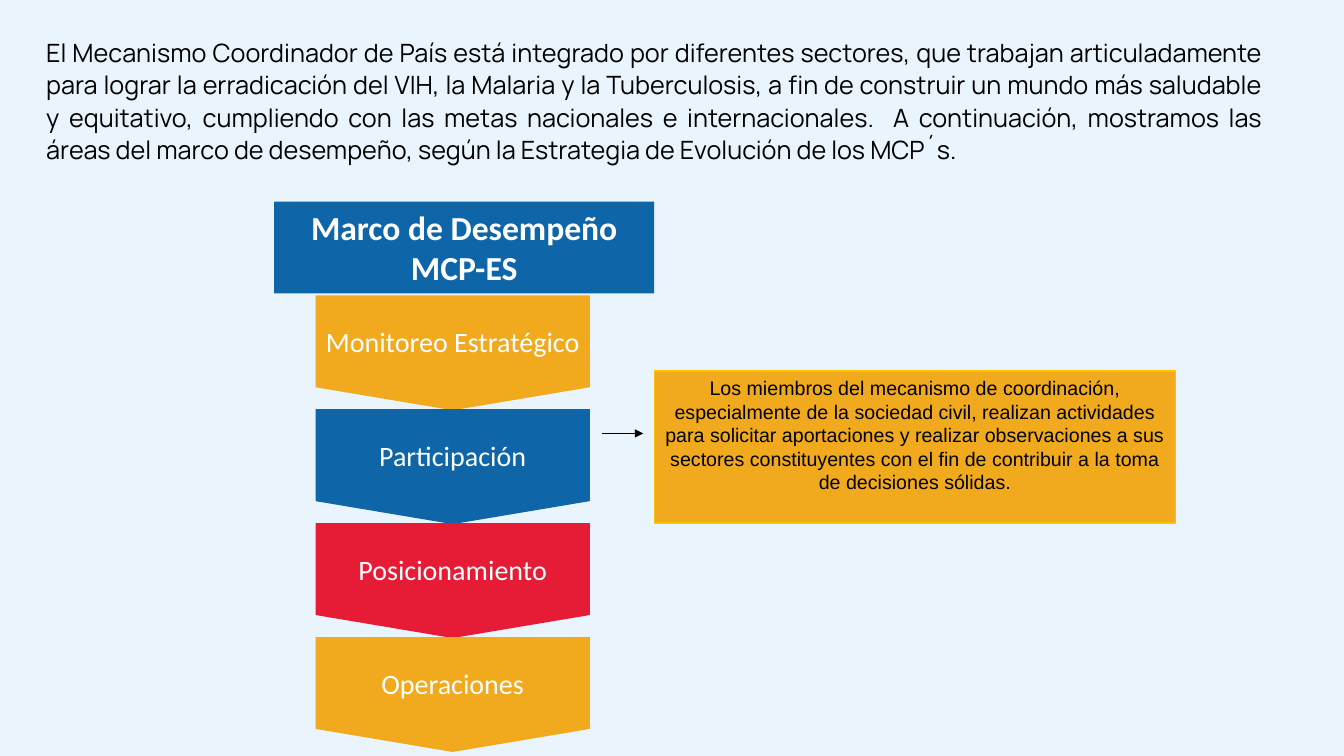
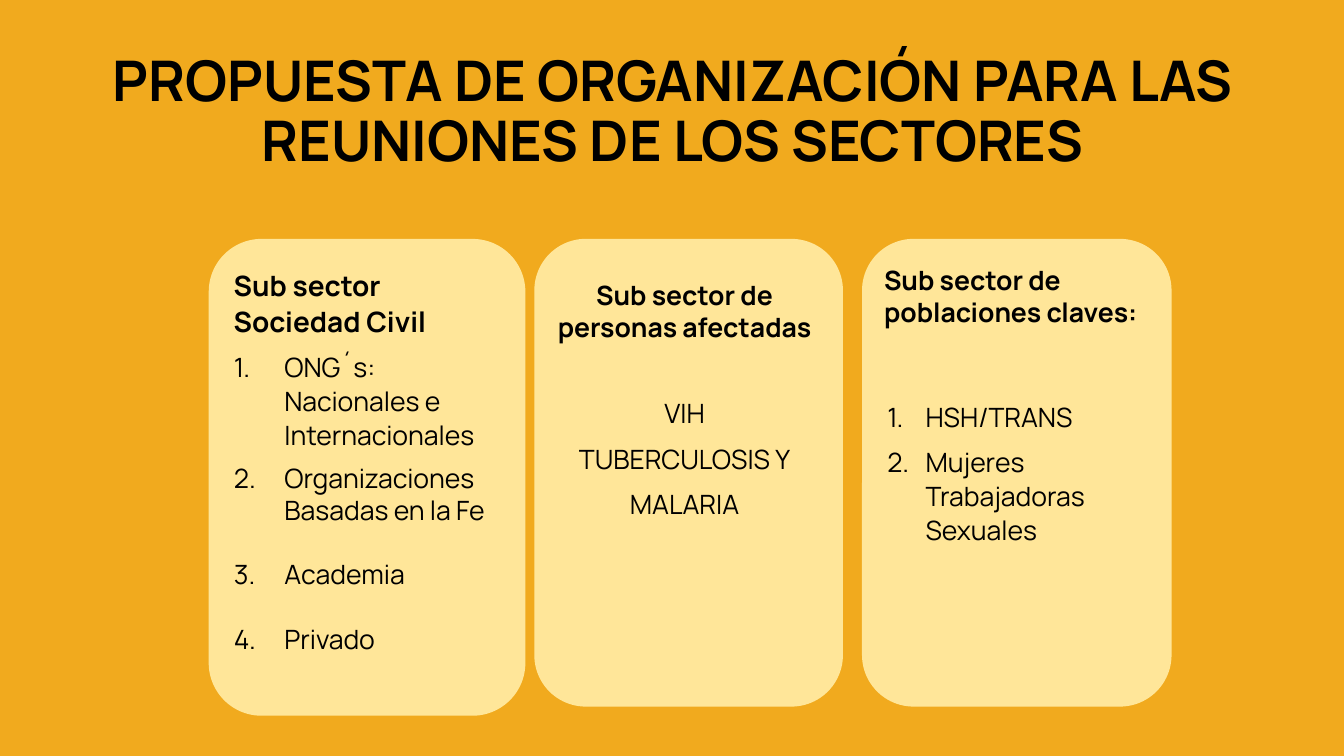
from dataclasses import dataclass

from lxml.etree import SubElement
from pptx import Presentation
from pptx.dml.color import RGBColor
from pptx.enum.shapes import MSO_CONNECTOR as Connector, MSO_SHAPE as Shape
from pptx.enum.text import MSO_ANCHOR as Anchor, MSO_AUTO_SIZE as AutoSize, PP_ALIGN as Align
from pptx.oxml.ns import qn
from pptx.util import Inches, Pt

BLACK = RGBColor(0x00, 0x00, 0x00)
WHITE = RGBColor(0xFF, 0xFF, 0xFF)
SKY = RGBColor(0xE9, 0xF4, 0xFD)
AMBER = RGBColor(0xF1, 0xAA, 0x1E)
GOLD = RGBColor(0xFF, 0xC0, 0x00)
CREAM = RGBColor(0xFF, 0xE6, 0x99)
BLUE = RGBColor(0x0E, 0x65, 0xA8)
RED = RGBColor(0xE6, 0x1C, 0x36)
BRAND_FONT = "Manrope"
CHART_FONT = "Calibri"
TITLE_ONLY, TWO_CONTENT = 5, 3

INTRO = (
    "El Mecanismo Coordinador de País está integrado por diferentes sectores, que trabajan "
    "articuladamente para lograr la erradicación del VIH, la Malaria y la Tuberculosis, a fin de "
    "construir un mundo más saludable y equitativo, cumpliendo con las metas nacionales e "
    "internacionales.  A continuación, mostramos las áreas del marco de desempeño, según la "
    "Estrategia de Evolución de los MCP´s."
)
PARTICIPATION = (
    "Los miembros del mecanismo de coordinación, especialmente de la sociedad civil, realizan "
    "actividades para solicitar aportaciones y realizar observaciones a sus sectores "
    "constituyentes con el fin de contribuir a la toma de decisiones sólidas."
)
AREAS = [
    ("Monitoreo Estratégico", AMBER),
    ("Participación", BLUE),
    ("Posicionamiento", RED),
    ("Operaciones", AMBER),
]


@dataclass
class Box:
    """A rectangle divided into 100 columns and 100 rows."""

    left: int
    top: int
    width: int
    height: int

    def span(self, column, row, columns, rows):
        """Return the box that spans the given columns and rows."""
        return Box(
            int(self.left + self.width * column / 100),
            int(self.top + self.height * row / 100),
            int(self.width * columns / 100),
            int(self.height * rows / 100),
        )

    @property
    def bounds(self):
        """Return left, top, width and height."""
        return self.left, self.top, self.width, self.height


@dataclass
class Style:
    """Typography of a paragraph."""

    size: float
    font: str = BRAND_FONT
    color: RGBColor = BLACK
    bold: bool = False
    align: Align = Align.LEFT
    spacing: float = 1.0
    after: float = 0


def write(paragraph, text, style):
    """Write one styled run into a paragraph."""
    paragraph.alignment = style.align
    paragraph.line_spacing = style.spacing
    paragraph.space_before = Pt(0)
    paragraph.space_after = Pt(style.after)
    run = paragraph.add_run()
    run.text = text
    run.font.size = Pt(style.size)
    run.font.name = style.font
    run.font.bold = style.bold
    run.font.color.rgb = style.color


def number(paragraph, indent):
    """Number a paragraph with a hanging indent."""
    properties = paragraph._p.get_or_add_pPr()
    properties.set("marL", str(Inches(indent)))
    properties.set("indent", str(-Inches(indent)))
    SubElement(properties, qn("a:buFontTx"))
    SubElement(properties, qn("a:buAutoNum"), type="arabicPeriod")


def prepare(frame, anchor=Anchor.TOP):
    """Wrap a text frame at a fixed size and return it."""
    frame.word_wrap = True
    frame.auto_size = AutoSize.NONE
    frame.vertical_anchor = anchor
    return frame


def add_text(slide, box, text, style):
    """Add a text box with one paragraph."""
    frame = prepare(slide.shapes.add_textbox(*box.bounds).text_frame)
    write(frame.paragraphs[0], text, style)


def add_panel(slide, box, kind, fill, line=None):
    """Add a flat filled shape and return it."""
    panel = slide.shapes.add_shape(kind, *box.bounds)
    panel.shadow.inherit = False
    panel.fill.solid()
    panel.fill.fore_color.rgb = fill
    if line is None:
        panel.line.fill.background()
    else:
        panel.line.color.rgb = line
        panel.line.width = Pt(1)
    return panel


def place(holder, box):
    """Move a placeholder into a box."""
    holder.left, holder.top, holder.width, holder.height = box.bounds


def add_slide(deck, layout, background):
    """Add a slide with a plain background and return it with its box."""
    slide = deck.slides.add_slide(deck.slide_layouts[layout])
    slide.background.fill.solid()
    slide.background.fill.fore_color.rgb = background
    return slide, Box(0, 0, deck.slide_width, deck.slide_height)


def set_title(slide, box, text, style, anchor):
    """Fill and place the title placeholder."""
    title = slide.shapes.title
    place(title, box)
    write(prepare(title.text_frame, anchor).paragraphs[0], text, style)
    return title


def add_areas(slide, box):
    """Stack the performance areas as downward steps."""
    style = Style(20, CHART_FONT, WHITE, align=Align.CENTER)
    step_rows = 25.17
    pitch = (100 - step_rows) / (len(AREAS) - 1)
    for index, (area, color) in enumerate(AREAS):
        step_box = box.span(0, index * pitch, 100, step_rows)
        step = add_panel(slide, step_box, Shape.FLOWCHART_OFFPAGE_CONNECTOR, color)
        write(prepare(step.text_frame, Anchor.MIDDLE).paragraphs[0], area, style)


def add_arrow(slide, box):
    """Draw a thin arrow along the top of a box."""
    arrow = slide.shapes.add_connector(
        Connector.STRAIGHT, box.left, box.top, box.left + box.width, box.top
    )
    arrow.line.color.rgb = BLACK
    arrow.line.width = Pt(0.5)
    SubElement(arrow.line._get_or_add_ln(), qn("a:tailEnd"), type="triangle")
    SubElement(arrow.element.spPr, qn("a:effectLst"))


def add_callout(slide, box):
    """Explain the participation area."""
    callout = add_panel(slide, box, Shape.RECTANGLE, AMBER, GOLD)
    style = Style(14, "Arial", align=Align.CENTER)
    write(prepare(callout.text_frame).paragraphs[0], PARTICIPATION, style)


def build_framework(deck):
    """Build the performance framework slide."""
    slide, page = add_slide(deck, TITLE_ONLY, SKY)
    heading = Style(24, CHART_FONT, WHITE, True, Align.CENTER)
    title = set_title(
        slide, page.span(20.4, 26.67, 28.28, 12.13), "Marco de Desempeño MCP-ES", heading, Anchor.TOP
    )
    title.fill.solid()
    title.fill.fore_color.rgb = BLUE
    intro = Style(18, align=Align.JUSTIFY, spacing=1.07, after=8)
    add_text(slide, page.span(2.7, 4, 91.97, 22.8), INTRO, intro)
    add_areas(slide, page.span(23.48, 39.07, 20.4, 60.4))
    add_arrow(slide, page.span(44.79, 57.33, 3.07, 0))
    add_callout(slide, page.span(48.69, 49.07, 38.78, 20.13))


def add_card(slide, box, heading, heading_span, heading_style):
    """Add a rounded sector card with its heading."""
    add_panel(slide, box, Shape.ROUNDED_RECTANGLE, CREAM)
    add_text(slide, box.span(*heading_span), heading, heading_style)


def fill_list(frame, items, indent=None):
    """Write the items of a list, numbered when an indent is given."""
    prepare(frame)
    for index, (item, style) in enumerate(items):
        paragraph = frame.add_paragraph() if index else frame.paragraphs[0]
        write(paragraph, item, style)
        if indent is not None:
            number(paragraph, indent)


def add_numbered(slide, holder, box, items, indent):
    """Bring a body placeholder to the front as a numbered list."""
    place(holder, box)
    slide.shapes.element.append(holder.element)
    fill_list(holder.text_frame, items, indent)


def build_sectors(deck):
    """Build the slide on the organisation of sector meetings."""
    slide, page = add_slide(deck, TWO_CONTENT, AMBER)
    set_title(
        slide,
        page.span(6.9, 5.33, 86.27, 19.33),
        "PROPUESTA DE ORGANIZACIÓN PARA LAS REUNIONES DE LOS SECTORES",
        Style(40, bold=True, align=Align.CENTER, spacing=0.9),
        Anchor.MIDDLE,
    )
    civil_holder, key_holder = slide.placeholders[1], slide.placeholders[2]
    loose = Style(19, spacing=1.07, after=8)
    spread = Style(19, after=23)
    centred = Style(19, align=Align.CENTER, spacing=1.07, after=8)

    civil = page.span(15.53, 31.6, 23.56, 63.07)
    add_card(slide, civil, "Sub sector Sociedad Civil", (4.78, 4.65, 90.13, 19),
             Style(20, bold=True, spacing=1.07))
    civil_items = [
        ("ONG´s: Nacionales e Internacionales", loose),
        ("Organizaciones Basadas en la Fe", spread),
        ("Academia", spread),
        ("Privado", Style(19)),
    ]
    add_numbered(slide, civil_holder, civil.span(4.78, 22, 90.13, 72), civil_items, 0.5)

    affected = page.span(39.76, 31.6, 22.96, 61.87)
    add_card(slide, affected, "Sub sector de personas afectadas", (-1.31, 7.54, 100, 16),
             Style(19, bold=True, align=Align.CENTER))
    conditions = slide.shapes.add_textbox(*affected.span(7.84, 32.33, 81.7, 28.9).bounds)
    fill_list(conditions.text_frame,
              [(name, centred) for name in ("VIH", "TUBERCULOSIS Y", "MALARIA")])

    key = page.span(64.14, 31.6, 23.03, 61.87)
    add_card(slide, key, "Sub sector de poblaciones claves:", (3.91, 4.31, 92.18, 16),
             Style(19, bold=True))
    key_items = [(name, loose) for name in ("HSH/TRANS", "Mujeres Trabajadoras Sexuales")]
    add_numbered(slide, key_holder, key.span(4.89, 33, 90.23, 40), key_items, 0.38)


def main():
    """Build and save the deck."""
    deck = Presentation()
    deck.slide_width, deck.slide_height = Inches(13.33), Inches(7.5)
    build_framework(deck)
    build_sectors(deck)
    deck.save("out.pptx")


if __name__ == "__main__":
    main()
